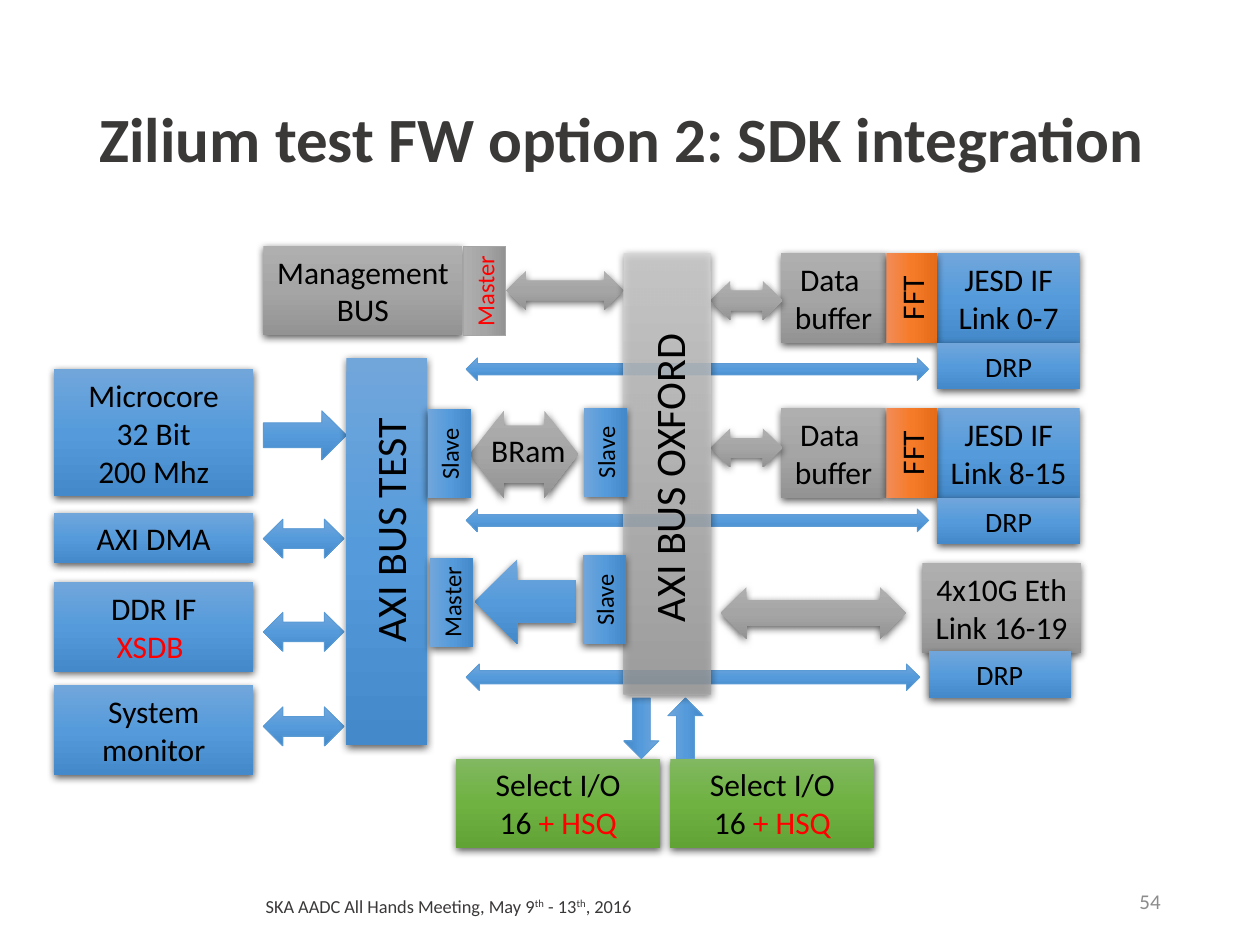
import pptx
import pptx.util
import pptx.dml.color
import pptx.enum.shapes
import pptx.enum.text
import pptx.oxml
import pptx.oxml.ns
import copy
from lxml import etree

Inches = pptx.util.Inches
Pt = pptx.util.Pt
RGB = pptx.dml.color.RGBColor
KIND = pptx.enum.shapes.MSO_SHAPE
ALIGN = pptx.enum.text.PP_ALIGN
ANCHOR = pptx.enum.text.MSO_ANCHOR
FIT = pptx.enum.text.MSO_AUTO_SIZE
qn = pptx.oxml.ns.qn

BLACK = RGB(0x00, 0x00, 0x00)
RED = RGB(0xFF, 0x00, 0x00)
DARK = RGB(0x3B, 0x38, 0x38)
PALE = RGB(0x8C, 0x8C, 0x8C)
EDGE = RGB(0x5B, 0x9B, 0xD5)
MID = RGB(0xA5, 0xA5, 0xA5)
BLUE = [RGB(0x71, 0xA6, 0xDB), RGB(0x55, 0x9B, 0xDB), RGB(0x44, 0x8A, 0xCA)]
GRAY = [RGB(0xAF, 0xAF, 0xAF), MID, RGB(0x93, 0x93, 0x93)]
AMBER = [RGB(0xF1, 0x8C, 0x57), RGB(0xF6, 0x7B, 0x28), RGB(0xE5, 0x6C, 0x19)]
GREEN = [RGB(0x81, 0xB8, 0x61), RGB(0x6F, 0xB2, 0x42), RGB(0x62, 0xA3, 0x36)]
GLASS = [RGB(0xD8, 0xD8, 0xD8), MID]

BOX = KIND.RECTANGLE
BOTH = KIND.LEFT_RIGHT_ARROW
RIGHT = KIND.RIGHT_ARROW

deck = pptx.Presentation()
deck.slide_width = Inches(10)
deck.slide_height = Inches(7.5)
slide = deck.slides.add_slide(deck.slide_layouts[6])


def write(shape, text, size, color=BLACK, align=ALIGN.CENTER, bold=False):
    frame = shape.text_frame
    for n, line in enumerate(text.split("\n")):
        para = frame.add_paragraph() if n else frame.paragraphs[0]
        para.alignment = align
        for k, part in enumerate(line.split("~")):
            if part:
                run = para.add_run()
                run.text = part
                run.font.name = "Calibri"
                run.font.size = Pt(size)
                run.font.bold = bold
                run.font.color.rgb = RED if k % 2 else color
    return frame


def form(kind, x, y, w, h, tones, text="", size=18, turn=0, edge=None, wrap=True):
    shape = slide.shapes.add_shape(kind, Inches(x), Inches(y), Inches(w), Inches(h))
    shape.rotation = turn
    shape.shadow.inherit = False
    props = shape._element.spPr
    shape.fill.gradient()
    shape.fill.gradient_angle = 270
    stops = props.find(".//" + qn("a:gsLst"))
    if len(tones) == 3:
        stops.insert(1, copy.deepcopy(stops[0]))
    for n, (stop, tone) in enumerate(zip(shape.fill.gradient_stops, tones)):
        stop.color.rgb = tone
        stop.position = n / (len(tones) - 1)
    if edge:
        shape.line.color.rgb = edge
        shape.line.width = Pt(0.5)
    else:
        shape.line.fill.background()
        cast = etree.SubElement(props.find(qn("a:effectLst")), qn("a:outerShdw"),
                                blurRad="57150", dist="19050", dir="5400000",
                                algn="ctr", rotWithShape="0")
        ink = etree.SubElement(cast, qn("a:srgbClr"), val="000000")
        etree.SubElement(ink, qn("a:alpha"), val="63000")
    if text:
        frame = write(shape, text, size)
        frame.word_wrap = wrap
        frame.auto_size = FIT.SHAPE_TO_FIT_TEXT
        if size == 14:
            frame.margin_left = frame.margin_right = Inches(0.04)
    return shape


foot = slide.shapes.add_textbox(Inches(1.6), Inches(6.99), Inches(3.92), Inches(0.4))
frame = write(foot, "SKA AADC All Hands Meeting, May 9", 10.5, DARK)
frame.word_wrap = True
frame.vertical_anchor = ANCHOR.MIDDLE
for text, raised in [("th", True), (" - 13", False), ("th", True), (", 2016", False)]:
    run = frame.paragraphs[0].add_run()
    run.text = text
    run.font.name = "Calibri"
    run.font.size = Pt(10.5)
    run.font.color.rgb = DARK
    if raised:
        run._r.get_or_add_rPr().set("baseline", "30000")

title = slide.shapes.add_textbox(Inches(0.69), Inches(0.4), Inches(8.62), Inches(1.45))
frame = write(title, "Zilium test FW option 2: SDK integration", 36, DARK, ALIGN.LEFT, True)
frame.word_wrap = True
frame.vertical_anchor = ANCHOR.MIDDLE
frame.paragraphs[0].line_spacing = 0.9

form(BOX, 2.09, 1.95, 1.58, 0.71, GRAY, "Management \nBUS", wrap=False)
for y, link in [(2.01, "Link 0-7"), (3.24, "Link 8-15")]:
    form(BOX, 7.44, y, 1.13, 0.71, BLUE, "JESD IF\n" + link, wrap=False)
    form(BOX, 6.2, y, 0.83, 0.71, GRAY, "Data \nbuffer", wrap=False)
    form(BOX, 6.88, y + 0.155, 0.71, 0.4, AMBER, "FFT", turn=270)
    form(BOX, 7.44, y + 0.71, 1.13, 0.37, BLUE, "DRP", 16)
form(BOX, 7.32, 4.47, 1.26, 0.71, GRAY, "4x10G Eth\nLink 16-19", wrap=False)
form(BOX, 7.37, 5.17, 1.13, 0.37, BLUE, "DRP", 16)
for x in (3.62, 5.32):
    form(BOX, x, 6.02, 1.62, 0.71, GREEN, "Select I/O\n16 ~+ HSQ")

for x, y, w, h in [(5.64, 2.23, 0.57, 0.31), (4.02, 2.15, 0.93, 0.31),
                   (5.72, 4.66, 1.47, 0.41), (5.64, 3.4, 0.57, 0.31)]:
    form(BOTH, x, y, w, h, GRAY)
for x, turn in [(4.85, 90), (5.2, 270)]:
    form(RIGHT, x, 5.64, 0.48, 0.28, BLUE, turn=turn, edge=EDGE)
for y, w, h in [(2.84, 3.67, 0.18), (4.04, 3.67, 0.18), (5.27, 3.6, 0.21)]:
    form(BOTH, 3.7, y, w, h, BLUE, edge=EDGE)

for y, h, text in [(2.93, 1.01, "Microcore\n32 Bit\n200 Mhz"), (4.07, 0.4, "AXI DMA"),
                   (4.62, 0.71, "DDR IF\n~XSDB "), (5.44, 0.71, "System monitor")]:
    form(BOX, 0.43, y, 1.58, h, BLUE, text)
form(RIGHT, 2.09, 3.26, 0.66, 0.39, BLUE, edge=EDGE)
for y in (4.12, 4.86, 5.61):
    form(BOTH, 2.09, y, 0.64, 0.31, BLUE, edge=EDGE)

form(BOX, 2.75, 2.84, 0.64, 3.07, BLUE)
glass = form(BOX, 4.95, 2.01, 0.69, 3.5, GLASS)
for ink in glass._element.spPr.findall(".//" + qn("a:gs") + "/" + qn("a:srgbClr")):
    etree.SubElement(ink, qn("a:alpha"), val="77000")

ram = form(BOTH, 3.73, 3.26, 0.86, 0.69, GRAY)
ram.adjustments[0] = 0.66
ram.adjustments[1] = 0.39
form(KIND.LEFT_ARROW, 3.77, 4.44, 0.8, 0.67, BLUE)

tag = form(BOX, 3.49, 2.14, 0.71, 0.34, GRAY, "~Master", 14, 270, MID)
for x, y, text in [(4.45, 3.42, "Slave"), (4.44, 4.59, "Slave"),
                   (3.21, 3.43, "Slave"), (3.23, 4.61, "Master")]:
    form(BOX, x, y, 0.71, 0.34, BLUE, text, 14, 270)

for x, y, w, h, text, size, turn in [(2.07, 3.93, 2.04, 0.5, "AXI BUS TEST", 24, 270),
                                     (3.98, 3.46, 2.65, 0.5, "AXI BUS OXFORD", 24, 270),
                                     (3.8, 3.37, 0.8, 0.4, "BRam", 18, 0)]:
    label = slide.shapes.add_textbox(Inches(x), Inches(y), Inches(w), Inches(h))
    label.rotation = turn
    frame = write(label, text, size, align=ALIGN.LEFT)
    frame.word_wrap = turn != 0
    frame.auto_size = FIT.SHAPE_TO_FIT_TEXT

page = slide.shapes.add_textbox(Inches(7.06), Inches(6.95), Inches(2.25), Inches(0.4))
frame = write(page, "54", 12, PALE, ALIGN.RIGHT)
frame.word_wrap = True
frame.vertical_anchor = ANCHOR.MIDDLE

deck.save("out.pptx")
